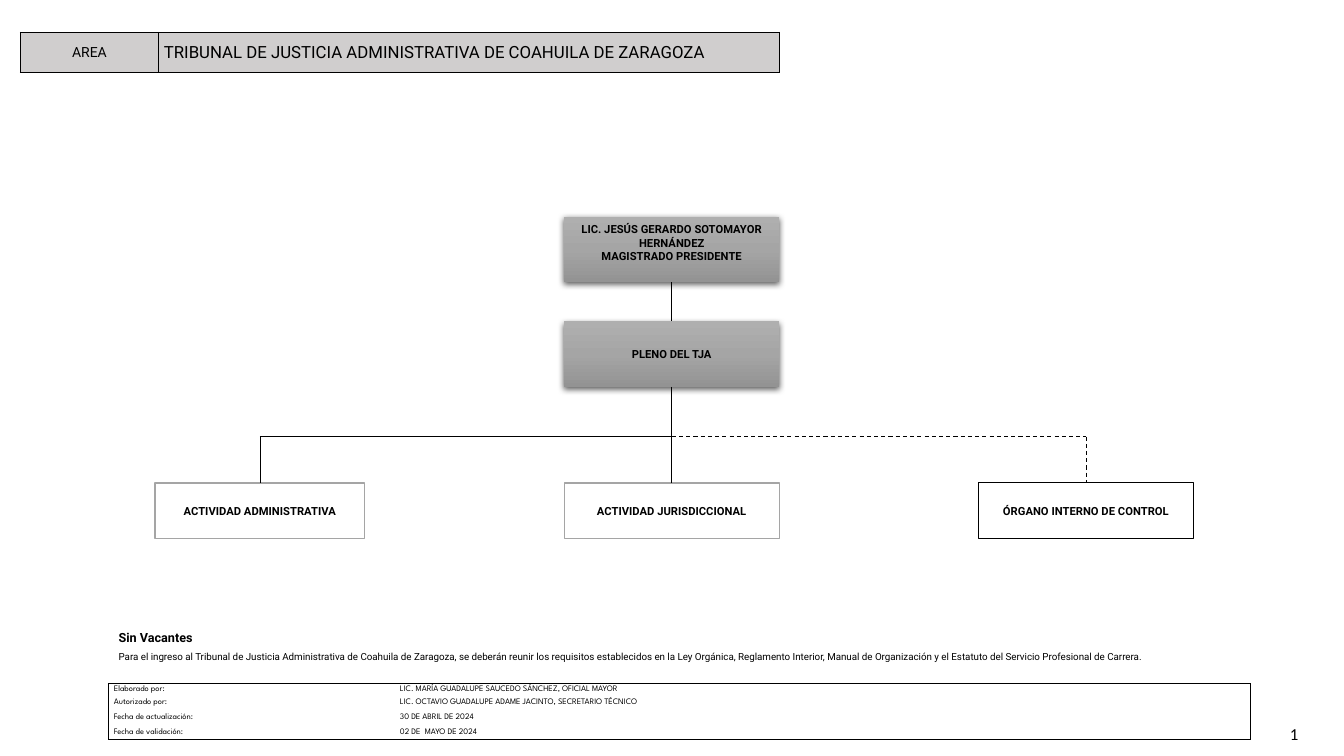
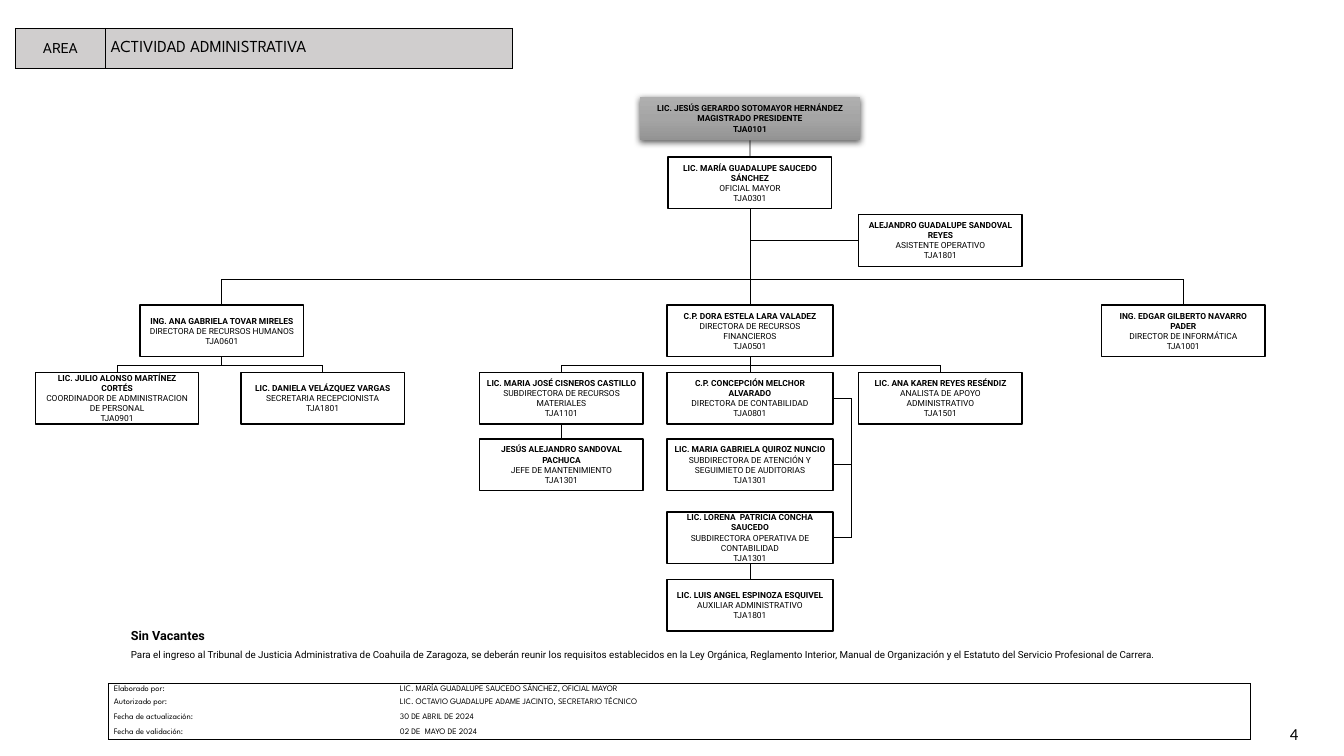
from copy import deepcopy
from dataclasses import dataclass

from lxml import etree
from pptx import Presentation
from pptx.dml.color import RGBColor
from pptx.enum.dml import MSO_LINE
from pptx.enum.shapes import MSO_CONNECTOR, MSO_SHAPE
from pptx.enum.text import MSO_ANCHOR, PP_ALIGN
from pptx.oxml.ns import qn
from pptx.util import Cm, Pt

LEFT, CENTER, RIGHT = PP_ALIGN.LEFT, PP_ALIGN.CENTER, PP_ALIGN.RIGHT
MIDDLE = MSO_ANCHOR.MIDDLE
DASH = MSO_LINE.DASH
RECTANGLE = MSO_SHAPE.RECTANGLE
STRAIGHT = MSO_CONNECTOR.STRAIGHT
TOP_SIDE, LEFT_SIDE, BOTTOM_SIDE, RIGHT_SIDE = range(4)


@dataclass(frozen=True)
class Theme:
    black: str = "000000"
    white: str = "FFFFFF"
    grey: str = "A5A5A5"
    band: str = "D0CECE"
    gradient: tuple = ((0, "AFAFAF"), (0.5, "A5A5A5"), (1, "939393"))
    body: str = "Roboto"
    display: str = "League Spartan"
    number: str = "Calibri"
    heading_size: float = 12
    area_size: float = 10
    note_title_size: float = 9
    unit_size: float = 8
    note_size: float = 7
    small_size: float = 6
    hairline: float = 0.5


THEME = Theme()

REQUIREMENTS = (
    "Para el ingreso al Tribunal de Justicia Administrativa de Coahuila de Zaragoza, "
    "se deberán reunir los requisitos establecidos en la Ley Orgánica, Reglamento Interior, "
    "Manual de Organización y el Estatuto del Servicio Profesional de Carrera."
)
APPROVALS = (
    ("Elaborado por:", "LIC. MARÍA GUADALUPE SAUCEDO SÁNCHEZ, OFICIAL MAYOR"),
    ("Autorizado por:", "LIC. OCTAVIO GUADALUPE ADAME JACINTO, SECRETARIO TÉCNICO"),
    ("Fecha de actualización:", "30 DE ABRIL DE 2024"),
    ("Fecha de validación:", "02 DE  MAYO DE 2024"),
)


def apply(target, values):
    for name, value in values.items():
        setattr(target, name, value)


def write(paragraph, text, size, font=THEME.body, bold=False, align=LEFT):
    paragraph.alignment = align
    run = paragraph.add_run()
    run.text = text
    apply(run.font, {"name": font, "size": Pt(size), "bold": bold})
    run.font.color.rgb = RGBColor.from_string(THEME.black)


# Tables
def set_borders(cell, sides):
    properties = cell._tc.get_or_add_tcPr()
    for side in "LRTB":
        border = etree.SubElement(properties, qn(f"a:ln{side}"), w=str(Pt(THEME.hairline)))
        if side in sides:
            fill = etree.SubElement(border, qn("a:solidFill"))
            etree.SubElement(fill, qn("a:srgbClr"), val=THEME.black)
        else:
            etree.SubElement(border, qn("a:noFill"))


def add_grid(slide, left, top, widths, heights):
    frame = slide.shapes.add_table(len(heights), len(widths), Cm(left), Cm(top),
                                   Cm(sum(widths)), Cm(sum(heights)))
    grid = frame.table
    apply(grid, {"first_row": False, "horz_banding": False})
    for column, width in zip(grid.columns, widths):
        column.width = Cm(width)
    for row, height in zip(grid.rows, heights):
        row.height = Cm(height)
    return grid


def fill_cell(cell, text, size, font, borders, align=LEFT, color=None):
    apply(cell, {"margin_left": Cm(0.13), "margin_right": Cm(0.13), "margin_top": 0,
                 "margin_bottom": 0, "vertical_anchor": MIDDLE})
    set_borders(cell, borders)
    if color:
        cell.fill.solid()
        cell.fill.fore_color.rgb = RGBColor.from_string(color)
    else:
        cell.fill.background()
    write(cell.text_frame.paragraphs[0], text, size, font, align=align)


def add_area_band(slide, left, top, widths, heading, font):
    grid = add_grid(slide, left, top, widths, [1.02])
    fill_cell(grid.cell(0, 0), "AREA", THEME.area_size, THEME.body, "LRTB", CENTER, THEME.band)
    fill_cell(grid.cell(0, 1), heading, THEME.heading_size, font, "LRTB", LEFT, THEME.band)


def add_approvals(slide, left, top):
    grid = add_grid(slide, left, top, [7.21, 21.57], [0.3, 0.36, 0.4, 0.36])
    last = len(APPROVALS) - 1
    for row, entry in enumerate(APPROVALS):
        edge = "T" if row == 0 else "B" if row == last else ""
        for column, text in enumerate(entry):
            fill_cell(grid.cell(row, column), text, THEME.small_size, THEME.display,
                      "LR"[column] + edge)


# Text below the chart
def add_text(slide, left, top, width, height):
    frame = slide.shapes.add_textbox(Cm(left), Cm(top), Cm(width), Cm(height)).text_frame
    frame.word_wrap = True
    return frame


def add_vacancy_note(slide, left, top):
    frame = add_text(slide, left, top, 28.8, 1.04)
    write(frame.paragraphs[0], "Sin Vacantes", THEME.note_title_size, bold=True)
    requirement = frame.add_paragraph()
    requirement.line_spacing = 1.5
    write(requirement, REQUIREMENTS, THEME.note_size)


def add_page_number(slide, number):
    frame = add_text(slide, 29.11, 17.98, 3.86, 1.02)
    frame.vertical_anchor = MIDDLE
    write(frame.paragraphs[0], number, THEME.heading_size, THEME.number, align=RIGHT)


def add_footer(slide, number, note_left, note_top):
    add_vacancy_note(slide, note_left, note_top)
    add_approvals(slide, 2.74, 17.22)
    add_page_number(slide, number)


# Organisation boxes
def add_box(slide, center, top, width, height, lines, size=THEME.small_size, bold_lines=1,
            line_color=THEME.black, line_width=1.0):
    box = slide.shapes.add_shape(RECTANGLE, Cm(center - width / 2), Cm(top),
                                 Cm(width), Cm(height))
    box.shadow.inherit = False
    box.fill.solid()
    box.fill.fore_color.rgb = RGBColor.from_string(THEME.white)
    box.line.color.rgb = RGBColor.from_string(line_color)
    box.line.width = Pt(line_width)
    frame = box.text_frame
    apply(frame, {"word_wrap": True, "vertical_anchor": MIDDLE, "margin_left": Cm(0.18),
                  "margin_right": Cm(0.18), "margin_top": Cm(0.1), "margin_bottom": Cm(0.1)})
    for index, text in enumerate(lines):
        paragraph = frame.add_paragraph() if index else frame.paragraphs[0]
        write(paragraph, text, size, bold=index < bold_lines, align=CENTER)
    return box


def add_head_box(slide, *place, lines, size):
    box = add_box(slide, *place, lines, size, len(lines))
    box.line.fill.background()
    box.fill.gradient()
    box.fill.gradient_angle = 270
    properties = box._element.spPr
    stops = properties.find(".//" + qn("a:gsLst"))
    stops.insert(1, deepcopy(stops[0]))
    for stop, (position, color) in zip(box.fill.gradient_stops, THEME.gradient):
        stop.position = position
        stop.color.rgb = RGBColor.from_string(color)
    # Soft shadow below the box
    shadow = etree.SubElement(properties.find(qn("a:effectLst")), qn("a:outerShdw"),
                              blurRad=str(Pt(4.5)), dist=str(Pt(1.5)), dir="5400000",
                              algn="ctr", rotWithShape="0")
    tint = etree.SubElement(shadow, qn("a:srgbClr"), val=THEME.black)
    etree.SubElement(tint, qn("a:alpha"), val="63000")
    return box


# Connectors: an end is a point (x, y) or a joint (box, side)
def side_point(box, side):
    middle_x, middle_y = box.left + box.width // 2, box.top + box.height // 2
    return ((middle_x, box.top), (box.left, middle_y),
            (middle_x, box.top + box.height), (box.left + box.width, middle_y))[side]


def link(slide, start, finish, dash=None, width=THEME.hairline):
    joined = [not isinstance(end[0], int) for end in (start, finish)]
    points = [side_point(*end) if joint else end
              for end, joint in zip((start, finish), joined)]
    connector = slide.shapes.add_connector(STRAIGHT, *points[0], *points[1])
    if joined[0]:
        connector.begin_connect(*start)
    if joined[1]:
        connector.end_connect(*finish)
    connector.line.color.rgb = RGBColor.from_string(THEME.black)
    connector.line.width = Pt(width)
    if dash:
        connector.line.dash_style = dash
    etree.SubElement(connector._element.spPr, qn("a:effectLst"))


def link_down(slide, upper, lower):
    link(slide, (upper, BOTTOM_SIDE), (lower, TOP_SIDE))


def branch(slide, parent, children, bus, trunk=False, **style):
    """Run a bus at one height from below the parent to the side children."""
    bus = Cm(bus)
    middle = side_point(parent, BOTTOM_SIDE)[0]
    columns = [side_point(child, TOP_SIDE)[0] for child in children]
    if trunk:
        link(slide, (parent, BOTTOM_SIDE), (middle, bus), **style)
    link(slide, (min(columns + [middle]), bus), (max(columns + [middle]), bus), **style)
    for column, child in zip(columns, children):
        link(slide, (column, bus), (child, TOP_SIDE), **style)


# Slides
def build_court(slide):
    add_area_band(slide, 0.51, 0.81, [3.49, 15.64],
                  "TRIBUNAL DE JUSTICIA ADMINISTRATIVA DE COAHUILA DE ZARAGOZA", THEME.body)
    axis, wide = 16.93, 5.42
    president = add_head_box(slide, axis, 5.46, wide, 1.65, size=THEME.unit_size,
                             lines=["LIC. JESÚS GERARDO SOTOMAYOR HERNÁNDEZ",
                                    "MAGISTRADO PRESIDENTE"])
    president.text_frame.margin_bottom = Cm(0.43)
    plenary = add_head_box(slide, axis, 8.1, wide, 1.65, size=THEME.unit_size,
                           lines=["PLENO DEL TJA"])
    administrative, judicial, control = [
        add_box(slide, center, 12.17, width, 1.4, [text], THEME.unit_size, 1, color, line)
        for center, width, text, color, line in (
            (6.55, 5.28, "ACTIVIDAD ADMINISTRATIVA", THEME.grey, 1),
            (axis, wide, "ACTIVIDAD JURISDICCIONAL", THEME.grey, 1),
            (27.37, wide, "ÓRGANO INTERNO DE CONTROL", THEME.black, 0.75))]
    link_down(slide, president, plenary)
    link_down(slide, plenary, judicial)
    branch(slide, plenary, [administrative], 11)
    branch(slide, plenary, [control], 11, dash=DASH, width=0.75)
    add_footer(slide, "1", 2.74, 15.75)


def build_administration(slide):
    add_area_band(slide, 0.38, 0.71, [2.28, 10.26], "ACTIVIDAD ADMINISTRATIVA", THEME.display)
    axis, right_axis, left_axis = 18.9, 23.7, 14.15
    narrow, wide, height = 4.12, 4.18, 1.3
    directors, staff, support = 7.69, 9.39, 11.06
    president = add_head_box(slide, axis, 2.44, 5.56, 1.1, size=THEME.small_size,
                             lines=["LIC. JESÚS GERARDO SOTOMAYOR HERNÁNDEZ",
                                    "MAGISTRADO PRESIDENTE", "TJA0101"])
    (officer, assistant, personnel, finance, computing, coordinator, receptionist, materials,
     accounting, analyst, maintenance, audits, operations, auxiliary) = [
        add_box(slide, center, top, width, height, lines) for center, top, width, *lines in (
            (axis, 3.96, narrow, "LIC. MARÍA GUADALUPE SAUCEDO SÁNCHEZ",
             "OFICIAL MAYOR", "TJA0301"),
            (right_axis, 5.41, narrow, "ALEJANDRO GUADALUPE SANDOVAL REYES",
             "ASISTENTE OPERATIVO", "TJA1801"),
            (5.59, directors, narrow, "ING. ANA GABRIELA TOVAR MIRELES",
             "DIRECTORA DE RECURSOS HUMANOS", "TJA0601"),
            (axis, directors, wide, "C.P. DORA ESTELA LARA VALADEZ",
             "DIRECTORA DE RECURSOS FINANCIEROS", "TJA0501"),
            (29.82, directors, narrow, "ING. EDGAR GILBERTO NAVARRO PADER",
             "DIRECTOR DE INFORMÁTICA", "TJA1001"),
            (2.95, staff, narrow, "LIC. JULIO ALONSO MARTÍNEZ CORTÉS",
             "COORDINADOR DE ADMINISTRACION DE PERSONAL", "TJA0901"),
            (8.13, staff, narrow, "LIC. DANIELA VELÁZQUEZ VARGAS",
             "SECRETARIA RECEPCIONISTA", "TJA1801"),
            (left_axis, staff, narrow, "LIC. MARIA JOSÉ CISNEROS CASTILLO",
             "SUBDIRECTORA DE RECURSOS MATERIALES", "TJA1101"),
            (axis, staff, wide, "C.P. CONCEPCIÓN MELCHOR ALVARADO",
             "DIRECTORA DE CONTABILIDAD", "TJA0801"),
            (right_axis, staff, narrow, "LIC. ANA KAREN REYES RESÉNDIZ",
             "ANALISTA DE APOYO ADMINISTRATIVO", "TJA1501"),
            (left_axis, support, narrow, "JESÚS ALEJANDRO SANDOVAL PACHUCA",
             "JEFE DE MANTENIMIENTO", "TJA1301"),
            (axis, support, wide, "LIC. MARIA GABRIELA QUIROZ NUNCIO",
             "SUBDIRECTORA DE ATENCIÓN Y SEGUIMIETO DE AUDITORIAS", "TJA1301"),
            (axis, 12.9, wide, "LIC. LORENA  PATRICIA CONCHA SAUCEDO",
             "SUBDIRECTORA OPERATIVA DE CONTABILIDAD", "TJA1301"),
            (axis, 14.6, wide, "LIC. LUIS ANGEL ESPINOZA ESQUIVEL",
             "AUXILIAR ADMINISTRATIVO", "TJA1801"))]
    for upper, lower in ((president, officer), (officer, finance), (finance, accounting),
                         (materials, maintenance), (operations, auxiliary)):
        link_down(slide, upper, lower)
    branch(slide, officer, [personnel, computing], 7.04)
    branch(slide, personnel, [coordinator, receptionist], 9.2, trunk=True)
    branch(slide, finance, [materials, analyst], 9.2)
    # Assistant beside the main trunk
    trunk_x = side_point(officer, BOTTOM_SIDE)[0]
    link(slide, (assistant, LEFT_SIDE), (trunk_x, side_point(assistant, LEFT_SIDE)[1]))
    # Bracket to the right of the accounting column
    bracket_x, rungs = Cm(21.46), []
    for box in (accounting, audits, operations):
        rungs.append((bracket_x, side_point(box, RIGHT_SIDE)[1]))
        link(slide, (box, RIGHT_SIDE), rungs[-1])
    link(slide, rungs[0], rungs[-1])
    add_footer(slide, "4", 3.05, 15.7)


def main():
    deck = Presentation()
    apply(deck, {"slide_width": Cm(33.87), "slide_height": Cm(19.05)})
    blank = deck.slide_layouts[6]
    for build in (build_court, build_administration):
        build(deck.slides.add_slide(blank))
    deck.save("out.pptx")


if __name__ == "__main__":
    main()
